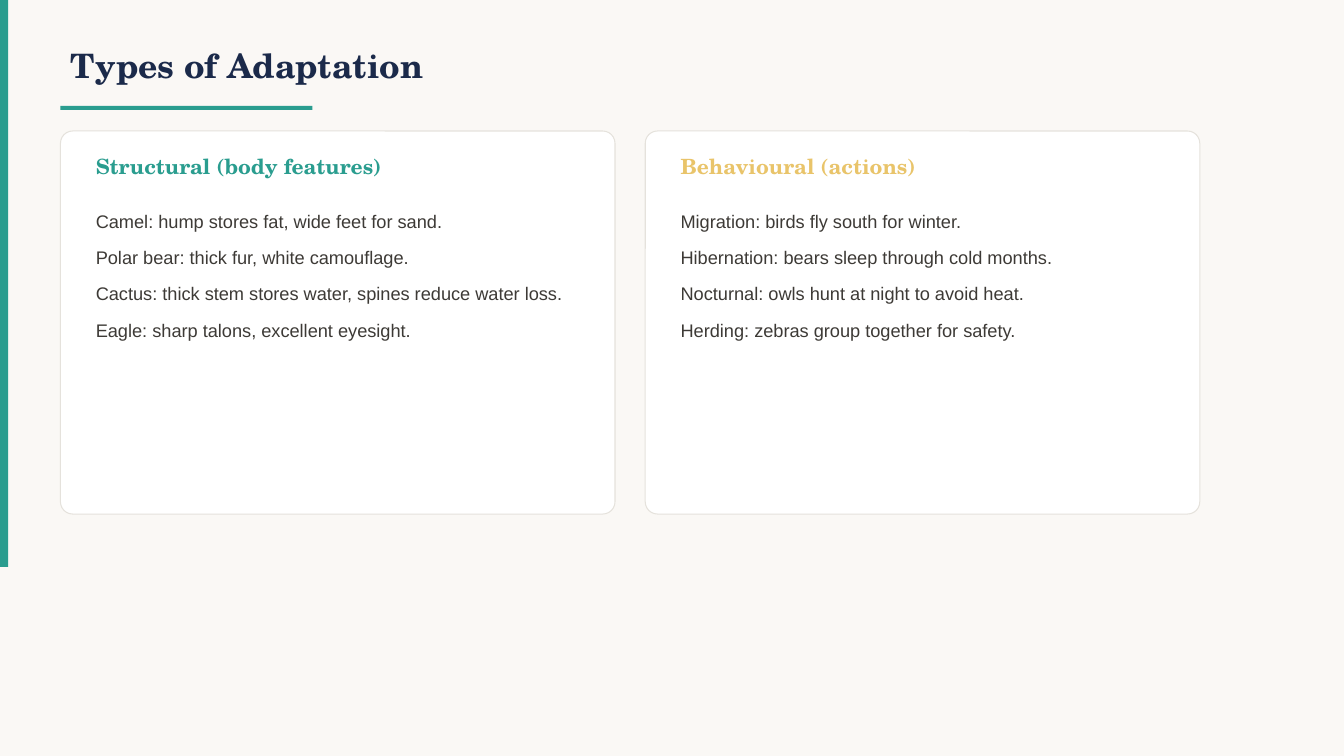
from lxml.etree import SubElement
from pptx import Presentation
from pptx.dml.color import RGBColor
from pptx.enum.shapes import MSO_SHAPE as Shape
from pptx.enum.text import MSO_ANCHOR as Anchor, MSO_AUTO_SIZE as AutoSize, PP_ALIGN as Align
from pptx.oxml.ns import qn
from pptx.util import Inches, Pt

COLORS = {
    "background": "FAF8F5", "teal": "2A9D8F", "gold": "E9C46A", "navy": "1B2A4A",
    "text": "3D3A36", "card": "FFFFFF", "border": "E5E2DC",
}
SERIF, SANS = "TeX Gyre Schola", "Arial"
WIDTH, HEIGHT = 13.33, 7.5
MARGIN = 0.6
CARD_WIDTH, CARD_HEIGHT, CARD_TOP, CARD_GAP = 5.5, 3.8, 1.3, 0.3
COMPARISON_LAYOUT = 4

TITLE = "Types of Adaptation"
ADAPTATIONS = [
    ("Structural (body features)", "teal", [
        "Camel: hump stores fat, wide feet for sand.",
        "Polar bear: thick fur, white camouflage.",
        "Cactus: thick stem stores water, spines reduce water loss.",
        "Eagle: sharp talons, excellent eyesight.",
    ]),
    ("Behavioural (actions)", "gold", [
        "Migration: birds fly south for winter.",
        "Hibernation: bears sleep through cold months.",
        "Nocturnal: owls hunt at night to avoid heat.",
        "Herding: zebras group together for safety.",
    ]),
]


def color(name):
    return RGBColor.from_string(COLORS[name])


def add_block(slide, box, fill, border=None, preset=Shape.RECTANGLE):
    block = slide.shapes.add_shape(preset, *map(Inches, box))
    block.shadow.inherit = False
    block.fill.solid()
    block.fill.fore_color.rgb = color(fill)
    if border:
        block.line.color.rgb = color(border)
        block.line.width = Pt(0.75)
    else:
        block.line.fill.background()
    return block


def fill_placeholder(holder, box, lines, *, size, font, ink, bold=False,
                     anchor=Anchor.MIDDLE, spacing=1.0, after=0):
    """Move a placeholder to box, on top of the shapes so far, and set its text."""
    holder.left, holder.top, holder.width, holder.height = map(Inches, box)
    holder.element.getparent().append(holder.element)
    frame = holder.text_frame
    frame.word_wrap = True
    frame.auto_size = AutoSize.NONE
    frame.vertical_anchor = anchor
    frame.text = "\n".join(lines)
    for paragraph in frame.paragraphs:
        properties = paragraph._p.get_or_add_pPr()
        properties.set("marL", "0")
        properties.set("indent", "0")
        SubElement(properties, qn("a:buNone"))
        paragraph.alignment = Align.LEFT
        paragraph.line_spacing = spacing
        paragraph.space_before = Pt(0)
        paragraph.space_after = Pt(after)
        paragraph.font.size = Pt(size)
        paragraph.font.name = font
        paragraph.font.bold = bold
        paragraph.font.color.rgb = color(ink)


def add_header(slide, box):
    left, top, width, height = box
    fill_placeholder(slide.shapes.title, box, [TITLE],
                     size=24, font=SERIF, ink="navy", bold=True)
    add_block(slide, (left, top + height + 0.05, width / 4, 0.04), "teal")


def add_card(slide, box, heading_holder, list_holder, heading, accent, examples):
    left, top, width, height = box
    card = add_block(slide, box, "card", "border", Shape.ROUNDED_RECTANGLE)
    card.adjustments[0] = 0.032
    inner_left, inner_width = left + 0.25, width - 0.5
    fill_placeholder(heading_holder, (inner_left, top + 0.15, inner_width, 0.4), [heading],
                     size=15, font=SERIF, ink=accent, bold=True)
    fill_placeholder(list_holder, (inner_left, top + 0.65, inner_width, height - 0.9), examples,
                     size=13, font=SANS, ink="text", anchor=Anchor.TOP, spacing=1.4, after=4)


def build_comparison(deck):
    slide = deck.slides.add_slide(deck.slide_layouts[COMPARISON_LAYOUT])
    slide.background.fill.solid()
    slide.background.fill.fore_color.rgb = color("background")
    add_block(slide, (0, 0, 0.08, HEIGHT * 0.75), "teal")
    add_header(slide, (MARGIN, 0.3, 10, 0.7))
    holders = list(slide.placeholders)[1:]
    for column, adaptation in enumerate(ADAPTATIONS):
        left = MARGIN + column * (CARD_WIDTH + CARD_GAP)
        add_card(slide, (left, CARD_TOP, CARD_WIDTH, CARD_HEIGHT),
                 *holders[2 * column:2 * column + 2], *adaptation)


def main():
    deck = Presentation()
    deck.slide_width, deck.slide_height = Inches(WIDTH), Inches(HEIGHT)
    build_comparison(deck)
    deck.save("out.pptx")


if __name__ == "__main__":
    main()
